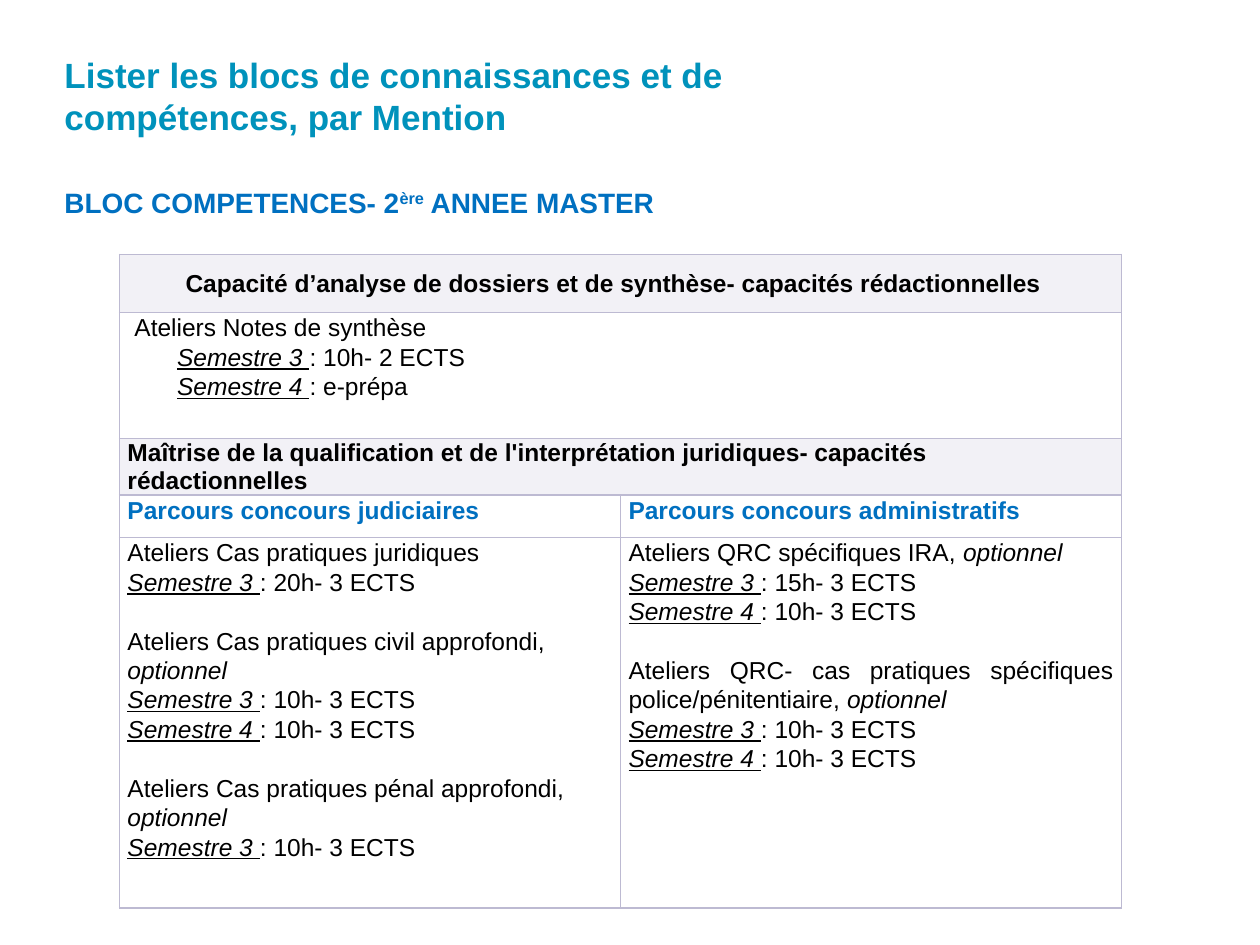
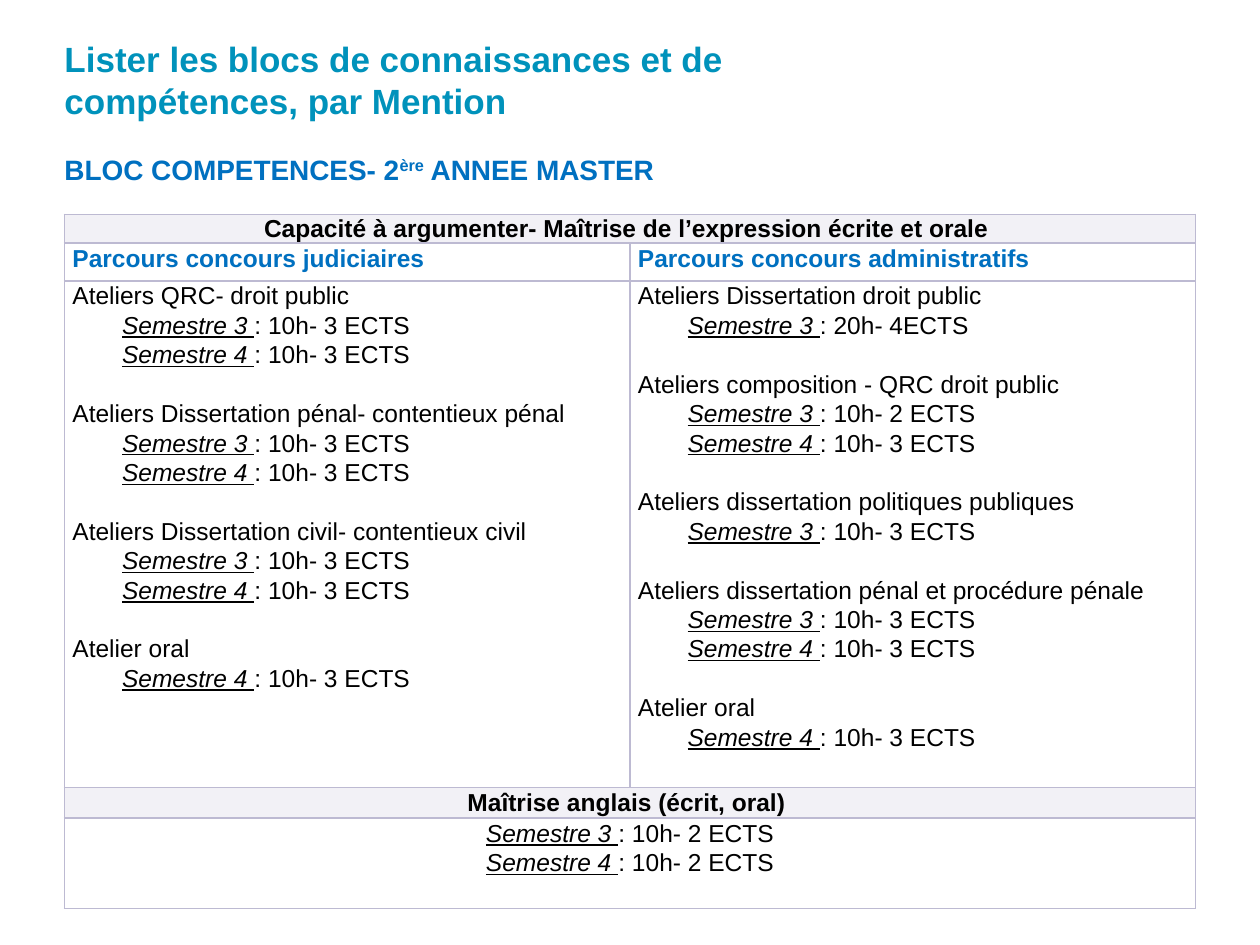
from lxml import etree
from pptx import Presentation
from pptx.dml.color import RGBColor
from pptx.enum import text as t
from pptx.oxml import ns
from pptx.util import Cm, Pt

TEAL = RGBColor(0x00, 0x92, 0xBB)
BLUE = RGBColor(0x00, 0x70, 0xC0)
BLACK = RGBColor(0x00, 0x00, 0x00)
WHITE = RGBColor(0xFF, 0xFF, 0xFF)
LILAC = RGBColor(0xF2, 0xF1, 0xF6)
BORDER = "BDBAD2"
FONT = "Arial"
LEFT, CENTER, JUSTIFY = t.PP_ALIGN.LEFT, t.PP_ALIGN.CENTER, t.PP_ALIGN.JUSTIFY
MIDDLE = t.MSO_ANCHOR.MIDDLE
MARGIN_X, TITLE_TOP, CELL_PAD = 1.3, 0.13, 0.16
BLOCK_GAP = Pt(16.8)

TITLE = "Lister les blocs de connaissances et de compétences, par Mention"
SUBTITLE = [("BLOC COMPETENCES- 2", 0), ("ère", 30000), (" ANNEE MASTER", 0)]
TRACKS = ["Parcours concours judiciaires", "Parcours concours administratifs"]

# A workshop is (name, optional?, {semester: load}).
# A row is (height in cm, kind, content, options); a list per column or one merged cell.
SLIDES = [
    dict(
        body_top=3.73, left=2.41, top=5.13, width=20.2,
        rows=[
            (1.17, "heading", ["Capacité d’analyse de dossiers et de synthèse- capacités rédactionnelles"],
             dict(align=CENTER, pad_right=0.44)),
            (2.54, "workshops", [[("Ateliers Notes de synthèse", False,
                                   {3: "10h- 2 ECTS", 4: "e-prépa"})]],
             dict(name_indent=0.14, indent=1)),
            (1.14, "heading", ["Maîtrise de la qualification et de l'interprétation juridiques- "
                               "capacités rédactionnelles"], {}),
            (0.86, "tracks", TRACKS, {}),
            (7.47, "workshops", [
                [("Ateliers Cas pratiques juridiques", False, {3: "20h- 3 ECTS"}),
                 ("Ateliers Cas pratiques civil approfondi, ", True,
                  {3: "10h- 3 ECTS", 4: "10h- 3 ECTS"}),
                 ("Ateliers Cas pratiques pénal approfondi, ", True, {3: "10h- 3 ECTS"})],
                [("Ateliers QRC spécifiques IRA, ", True, {3: "15h- 3 ECTS", 4: "10h- 3 ECTS"}),
                 ("Ateliers QRC- cas pratiques spécifiques police/pénitentiaire, ", True,
                  {3: "10h- 3 ECTS", 4: "10h- 3 ECTS"})],
            ], {}),
        ]),
    dict(
        body_top=3.07, left=MARGIN_X, top=4.32, width=22.8,
        rows=[
            (0.58, "heading", ["Capacité à argumenter- Maîtrise de l’expression écrite et orale"],
             dict(align=CENTER, pad_right=0.3)),
            (0.76, "tracks", TRACKS, {}),
            (10.21, "workshops", [
                [("Ateliers QRC- droit public", False, {3: "10h- 3 ECTS", 4: "10h- 3 ECTS"}),
                 ("Ateliers Dissertation pénal- contentieux pénal", False,
                  {3: "10h- 3 ECTS", 4: "10h- 3 ECTS"}),
                 ("Ateliers Dissertation civil- contentieux civil", False,
                  {3: "10h- 3 ECTS", 4: "10h- 3 ECTS"}),
                 ("Atelier oral", False, {4: "10h- 3 ECTS"})],
                [("Ateliers Dissertation droit public", False, {3: "20h- 4ECTS"}),
                 ("Ateliers composition - QRC droit public", False,
                  {3: "10h- 2 ECTS", 4: "10h- 3 ECTS"}),
                 ("Ateliers dissertation politiques publiques", False, {3: "10h- 3 ECTS"}),
                 ("Ateliers dissertation pénal et procédure pénale", False,
                  {3: "10h- 3 ECTS", 4: "10h- 3 ECTS"}),
                 ("Atelier oral", False, {4: "10h- 3 ECTS"})],
            ], dict(indent=1)),
            (0.62, "heading", ["Maîtrise anglais (écrit, oral)"], dict(align=CENTER, pad_right=0.3)),
            (1.82, "workshops", [[("", False, {3: "10h- 2 ECTS", 4: "10h- 2 ECTS"})]],
             dict(align=CENTER)),
        ]),
]


def style_run(r, size, color, bold=False):
    r.font.name, r.font.size, r.font.bold = FONT, Pt(size), bold
    r.font.color.rgb = color


def place(sp, left, top, width, height):
    sp.left, sp.top, sp.width, sp.height = Cm(left), Cm(top), Cm(width), Cm(height)
    tf = sp.text_frame
    tf.margin_left = tf.margin_right = tf.margin_top = tf.margin_bottom = 0
    tf.word_wrap, tf.auto_size = True, t.MSO_AUTO_SIZE.NONE
    return tf


def add_titles(s, body_top):
    tf = place(s.shapes.title, MARGIN_X, TITLE_TOP, 16.4, body_top - TITLE_TOP)
    tf.text, tf.vertical_anchor = TITLE, MIDDLE
    tf.paragraphs[0].alignment = LEFT
    style_run(tf.paragraphs[0].runs[0], 20, TEAL, True)

    p = place(s.placeholders[1], MARGIN_X, body_top, 22.45, 18.92 - body_top).paragraphs[0]
    pPr = p._p.get_or_add_pPr()
    pPr.set("marL", "0")
    pPr.set("indent", "0")
    etree.SubElement(pPr, ns.qn("a:buNone"))
    p.space_before = Pt(0)
    for words, baseline in SUBTITLE:
        r = p.add_run()
        r.text = words
        style_run(r, 16, BLUE, True)
        if baseline:
            r._r.get_or_add_rPr().set("baseline", str(baseline))


def set_borders(cell):
    tcPr = cell._tc.get_or_add_tcPr()
    for side in ("lnL", "lnR", "lnT", "lnB"):
        ln = etree.SubElement(tcPr, ns.qn("a:" + side), w=str(Pt(1)))
        fill = etree.SubElement(ln, ns.qn("a:solidFill"))
        etree.SubElement(fill, ns.qn("a:srgbClr"), val=BORDER)


def workshop_lines(workshops, name_indent=0, indent=0):
    """Yield (runs, indent, starts a new block) per line; a run is (text, italic, underline)."""
    for i, (name, optional, semesters) in enumerate(workshops):
        if name:
            runs = [(name, False, False)] + [("optionnel", True, False)] * optional
            yield runs, name_indent, i > 0
        for number, load in semesters.items():
            yield [(f"Semestre {number} ", True, True), (f": {load}", False, False)], indent, False


def fill_cell(cell, kind, content, align, pad_right=CELL_PAD, **indents):
    set_borders(cell)
    cell.fill.solid()
    cell.fill.fore_color.rgb = LILAC if kind == "heading" else WHITE
    cell.margin_left, cell.margin_right = Cm(CELL_PAD), Cm(pad_right)
    cell.margin_top = cell.margin_bottom = 0
    if kind == "heading":
        cell.vertical_anchor = MIDDLE
    if kind == "workshops":
        lines = workshop_lines(content, **indents)
    else:
        lines = [([(content, False, False)], 0, False)]
    tf = cell.text_frame
    for i, (runs, indent, new_block) in enumerate(lines):
        p = tf.add_paragraph() if i else tf.paragraphs[0]
        p.alignment = align
        p.line_spacing = 1.0 if kind == "heading" else 1.07
        if indent:
            p._p.get_or_add_pPr().set("marL", str(Cm(indent)))
        if new_block:
            p.space_before = BLOCK_GAP
        for words, italic, underline in runs:
            r = p.add_run()
            r.text = words
            style_run(r, 14, BLUE if kind == "tracks" else BLACK, kind != "workshops")
            r.font.italic, r.font.underline = italic, underline


def add_skills_table(s, left, top, width, rows):
    height = sum(row[0] for row in rows)
    table = s.shapes.add_table(len(rows), 2, Cm(left), Cm(top), Cm(width), Cm(height)).table
    table.first_row = table.horz_banding = False
    for col in table.columns:
        col.width = Cm(width / 2)
    for i, (row_height, kind, contents, options) in enumerate(rows):
        table.rows[i].height = Cm(row_height)
        if len(contents) == 1:
            table.cell(i, 0).merge(table.cell(i, 1))
            set_borders(table.cell(i, 1))
        for j, content in enumerate(contents):
            align = JUSTIFY if j else LEFT
            fill_cell(table.cell(i, j), kind, content, **{"align": align, **options})


def main():
    prs = Presentation()
    prs.slide_width, prs.slide_height = Cm(25.4), Cm(19.05)
    for page in SLIDES:
        s = prs.slides.add_slide(prs.slide_layouts[1])
        add_titles(s, page["body_top"])
        add_skills_table(s, page["left"], page["top"], page["width"], page["rows"])
    prs.save("out.pptx")


if __name__ == "__main__":
    main()
